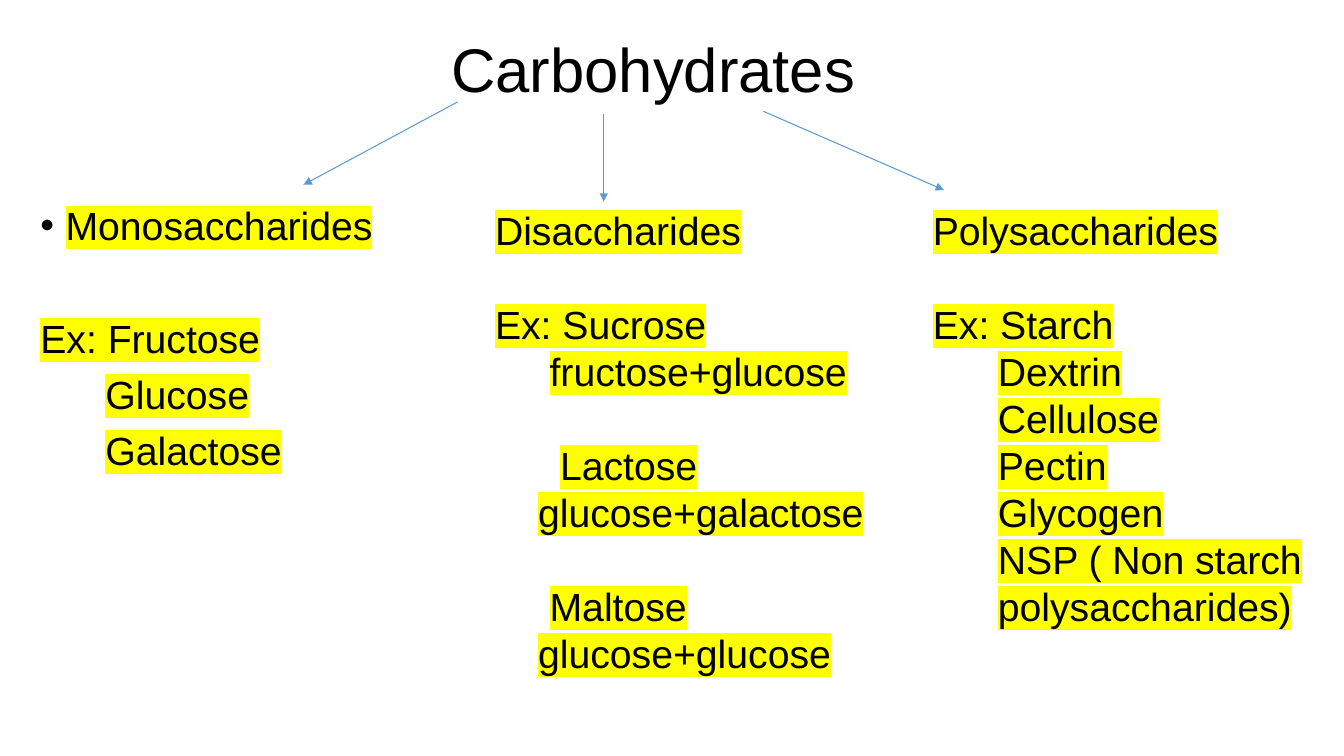
from lxml.etree import SubElement
from pptx import Presentation
from pptx.dml.color import RGBColor
from pptx.enum.shapes import MSO_CONNECTOR
from pptx.enum.text import MSO_ANCHOR, PP_ALIGN
from pptx.oxml.ns import qn
from pptx.util import Emu, Pt

PX = 9525  # 96 px to the inch
COLOURS = {"text": "000000", "highlight": "FFFF00", "arrow": "5B9BD5"}
FONT = "Arial"
BULLET_INDENT = 24

# Each line: text, indent in px, space before in pt
MONOSACCHARIDES = [
    ("Monosaccharides", BULLET_INDENT, 0),
    ("Ex: Fructose", 0, 50),
    ("Glucose", 62, 10),
    ("Galactose", 62, 10),
]
DISACCHARIDES = [
    ("Disaccharides", 0, 0),
    ("Ex: Sucrose", 0, 33.6),
    ("fructose+glucose", 52, 0),
    ("Lactose", 62, 33.6),
    ("glucose+galactose", 41, 0),
    ("Maltose", 52, 33.6),
    ("glucose+glucose", 41, 0),
]
POLYSACCHARIDES = [
    ("Polysaccharides", 0, 0),
    ("Ex: Starch", 0, 33.6),
    ("Dextrin", 62, 0),
    ("Cellulose", 62, 0),
    ("Pectin", 62, 0),
    ("Glycogen", 62, 0),
    ("NSP ( Non starch polysaccharides)", 62, 0),
]

# Columns: box (left, top, width, height), lines, line pitch in pt, bulleted heading
COLUMNS = [
    ((29, 192, 352, 456), MONOSACCHARIDES, 30.2, True),
    ((462, 192, 400, 462), DISACCHARIDES, 33.6, False),
    ((879, 192, 384, 462), POLYSACCHARIDES, 33.6, False),
]
ARROWS = [
    ((436, 97), (289, 176)),
    ((727, 106), (899, 181)),
    ((575, 109), (575, 192)),
]


def px(length):
    return Emu(length * PX)


def colour(name):
    return RGBColor.from_string(COLOURS[name])


def add_span(para, text, size, highlighted=False):
    span = para.add_run()
    span.text = text
    span.font.size = Pt(size)
    span.font.color.rgb = colour("text")
    if highlighted:
        highlight = SubElement(span.font._element, qn("a:highlight"))
        SubElement(highlight, qn("a:srgbClr"), val=COLOURS["highlight"])
    span.font.name = FONT


def indent(para, left, first=0):
    properties = para._p.get_or_add_pPr()
    properties.set("marL", str(px(left)))
    properties.set("indent", str(px(first)))
    return properties


def add_bullet(para):
    properties = indent(para, BULLET_INDENT, -BULLET_INDENT)
    SubElement(properties, qn("a:buFont"), typeface=FONT)
    SubElement(properties, qn("a:buChar"), char="•")


def place_title(page, box, text, left_indent):
    title = page.shapes.title
    title.left, title.top, title.width, title.height = map(px, box)
    frame = title.text_frame
    frame.vertical_anchor = MSO_ANCHOR.MIDDLE
    para = frame.paragraphs[0]
    para.alignment = PP_ALIGN.LEFT
    para.line_spacing = 0.9
    indent(para, left_indent)
    add_span(para, text, 44)


def add_column(page, box, lines, pitch, bulleted):
    frame = page.shapes.add_textbox(*map(px, box)).text_frame
    frame.word_wrap = True
    for number, (text, left_indent, space_before) in enumerate(lines):
        para = frame.add_paragraph() if number else frame.paragraphs[0]
        para.line_spacing = Pt(pitch)
        para.space_before = Pt(space_before)
        if bulleted and number == 0:
            add_bullet(para)
        else:
            indent(para, left_indent)
        add_span(para, text, 28, highlighted=True)


def add_arrow(page, start, end):
    arrow = page.shapes.add_connector(MSO_CONNECTOR.STRAIGHT, *map(px, start + end))
    arrow.line.color.rgb = colour("arrow")
    arrow.line.width = Pt(0.75)
    SubElement(arrow.line._get_or_add_ln(), qn("a:tailEnd"), type="triangle")
    SubElement(arrow._element.spPr, qn("a:effectLst"))


def build_carbohydrates(deck):
    page = deck.slides.add_slide(deck.slide_layouts[5])
    # Title
    place_title(page, (88, 0, 1104, 139), "Carbohydrates", 332)
    # Three classes with examples
    for column in COLUMNS:
        add_column(page, *column)
    # Arrows from the title to each class
    for start, end in ARROWS:
        add_arrow(page, start, end)


def main():
    deck = Presentation()
    deck.slide_width, deck.slide_height = px(1280), px(720)
    build_carbohydrates(deck)
    deck.save("out.pptx")


if __name__ == "__main__":
    main()
